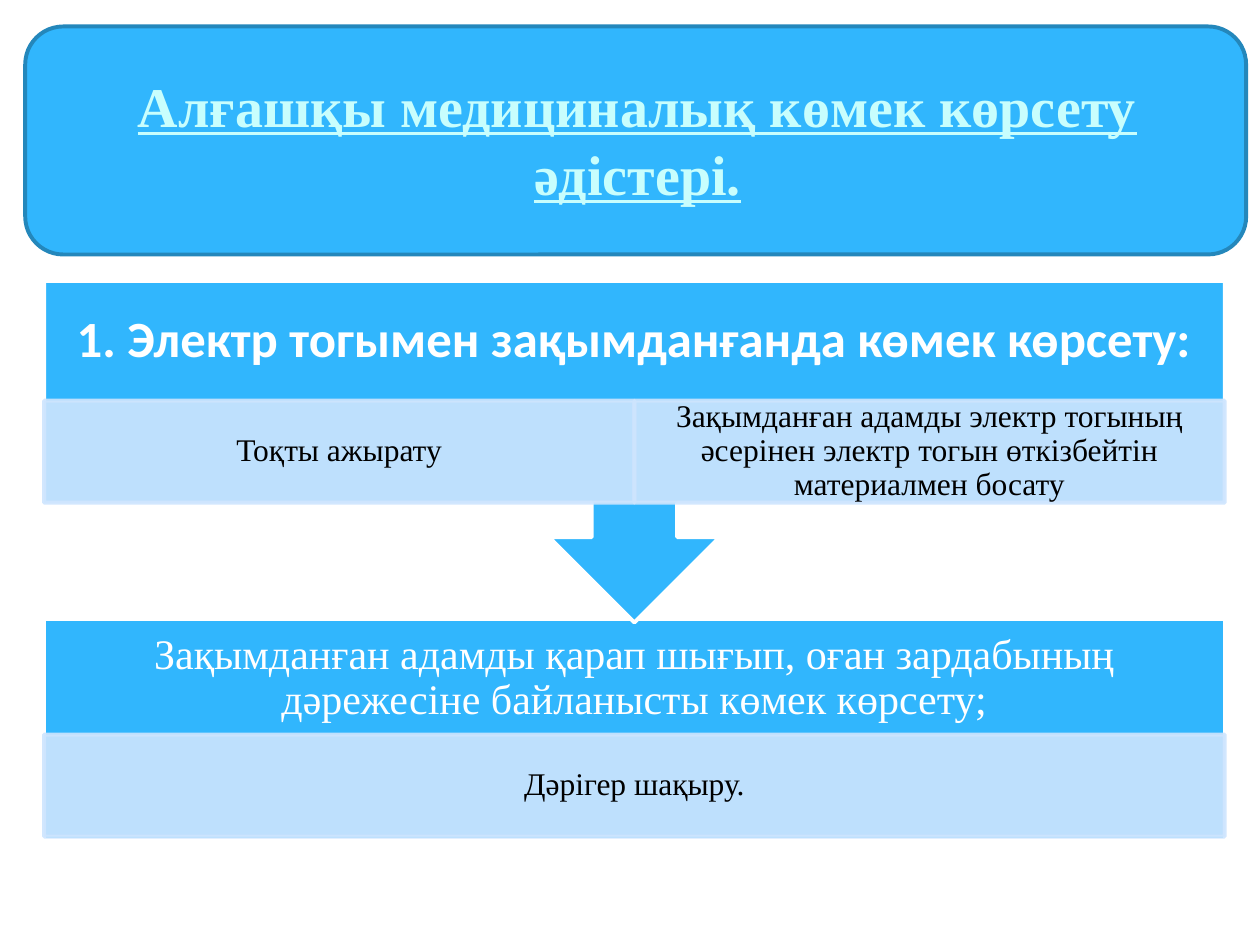
import pptx
import pptx.dml.color
import pptx.enum.shapes
import pptx.enum.text
import pptx.oxml.ns
import pptx.util
from lxml import etree

Inches = pptx.util.Inches
SHAPES = pptx.enum.shapes.MSO_SHAPE
COLORS = {
    "blue": "31B6FD",
    "outline": "2487BB",
    "pale": "CEE5FE",
    "title": "C8FEFD",
    "white": "FFFFFF",
    "black": "000000",
}
SERIF = "Times New Roman"
LEFT, WIDTH = 0.35, 9.37
HEADING_HEIGHT, CELL_HEIGHT = 0.95, 0.81


def rgb(name):
    return pptx.dml.color.RGBColor.from_string(COLORS[name])


def set_text(shape, text, size, color, font=SERIF, bold=False, spacing=0.9,
             insets=(0.1, 0.05), anchor=pptx.enum.text.MSO_ANCHOR.MIDDLE):
    frame = shape.text_frame
    frame.text = text
    frame.word_wrap = True
    frame.auto_size = pptx.enum.text.MSO_AUTO_SIZE.NONE
    frame.vertical_anchor = anchor
    frame.margin_left = frame.margin_right = Inches(insets[0])
    frame.margin_top = frame.margin_bottom = Inches(insets[1])
    paragraph = frame.paragraphs[0]
    paragraph.alignment = pptx.enum.text.PP_ALIGN.CENTER
    paragraph.line_spacing = spacing
    run_font = paragraph.runs[0].font
    run_font.name = font
    run_font.size = pptx.util.Pt(size)
    run_font.bold = bold
    run_font.color.rgb = rgb(color)
    return run_font


def add_block(slide, kind, left, top, width, height, fill, line):
    shape = slide.shapes.add_shape(
        kind, Inches(left), Inches(top), Inches(width), Inches(height))
    shape.shadow.inherit = False
    shape.fill.solid()
    shape.fill.fore_color.rgb = rgb(fill)
    shape.line.color.rgb = rgb(line)
    shape.line.width = pptx.util.Pt(2.25)
    return shape


def add_title(slide, text):
    add_block(slide, SHAPES.ROUNDED_RECTANGLE, 0.2, 0.21, 9.69, 1.81, "blue", "outline")
    title = slide.shapes.title
    title.left, title.top = Inches(0.59), Inches(0.52)
    title.width, title.height = Inches(8.94), Inches(1.18)
    title.element.getparent().append(title.element)
    font = set_text(title, text, 32, "title", bold=True, spacing=1.0,
                    anchor=pptx.enum.text.MSO_ANCHOR.TOP)
    font.underline = True


def add_heading(slide, top, text, size, inset, font=SERIF, bold=False):
    box = slide.shapes.add_textbox(
        Inches(LEFT), Inches(top), Inches(WIDTH), Inches(HEADING_HEIGHT))
    set_text(box, text, size, "white", font, bold, insets=(inset, inset))


def add_cells(slide, top, texts):
    width = WIDTH / len(texts)
    for index, text in enumerate(texts):
        cell = add_block(slide, SHAPES.RECTANGLE, LEFT + index * width, top,
                         width, CELL_HEIGHT, "pale", "pale")
        for color in cell.element.spPr.iter(pptx.oxml.ns.qn("a:srgbClr")):
            etree.SubElement(color, pptx.oxml.ns.qn("a:alpha"), val="90000")
        set_text(cell, text, 18, "black", insets=(0.14, 0.03))


def main():
    presentation = pptx.Presentation()
    presentation.slide_width = Inches(10)
    presentation.slide_height = Inches(7.5)
    slide = presentation.slides.add_slide(presentation.slide_layouts[5])

    add_title(slide, "Алғашқы медициналық көмек көрсету әдістері.")

    add_block(slide, SHAPES.RECTANGLE, LEFT, 4.91, WIDTH, 1.76, "blue", "white")
    add_heading(slide, 4.91, "Зақымданған адамды қарап шығып, оған зардабының "
                "дәрежесіне байланысты көмек көрсету;", 24, 0.19)
    add_cells(slide, 5.83, ["Дәрігер шақыру."])

    callout = add_block(slide, SHAPES.UP_ARROW_CALLOUT, LEFT, 2.23, WIDTH, 2.71,
                        "blue", "white")
    callout.rotation = 180
    add_heading(slide, 2.23, "1. Электр тогымен зақымданғанда көмек көрсету:",
                29, 0.23, "Calibri", True)
    add_cells(slide, 3.18, [
        "Тоқты ажырату",
        "Зақымданған адамды электр тогының әсерінен электр тогын "
        "өткізбейтін материалмен босату",
    ])

    presentation.save("out.pptx")


if __name__ == "__main__":
    main()
